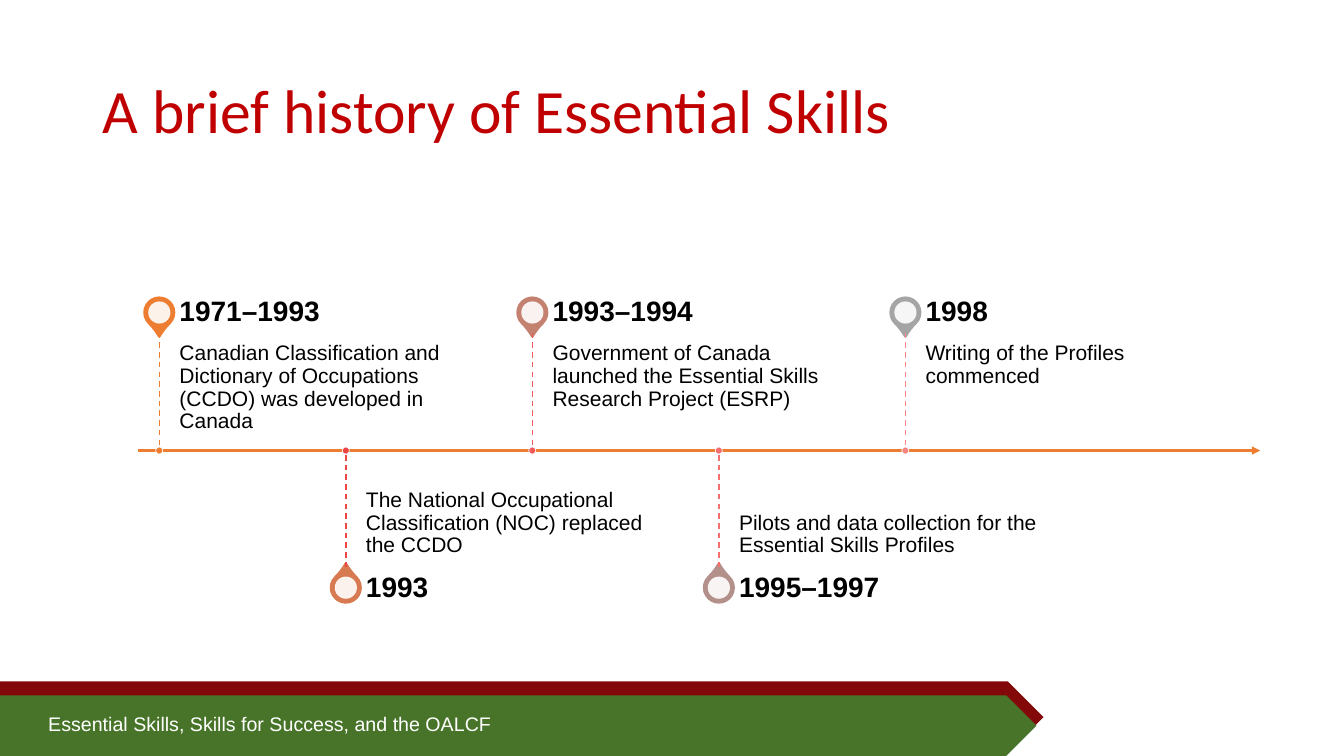
from dataclasses import dataclass

from lxml.etree import SubElement
from pptx import Presentation
from pptx.dml.color import RGBColor
from pptx.enum.dml import MSO_LINE
from pptx.enum.shapes import MSO_CONNECTOR, MSO_SHAPE as SHAPE
from pptx.enum.text import MSO_ANCHOR as ANCHOR, MSO_AUTO_SIZE, PP_ALIGN
from pptx.oxml.ns import qn
from pptx.shapes.autoshape import Shape
from pptx.shapes.connector import Connector
from pptx.slide import Slide
from pptx.util import Inches, Pt

COLORS = {
    "title": "C00000",
    "axis": "ED7D31",
    "text": "000000",
    "white": "FFFFFF",
    "red_band": "82080A",
    "green_band": "487429",
}
AXIS_Y = 4.47
FIRST_X = 1.58
STEP_X = 1.85
PIN_SIZE = 0.29
HOLE_SIZE = 0.22
DOT_SIZE = 0.07
LABEL_GAP = 0.2
LABEL_WIDTH = 3.08
DETAIL_HEIGHT = 1.16
YEAR_HEIGHT = 0.41


@dataclass(frozen=True)
class Milestone:
    years: str
    detail: str
    pin_color: str
    stem_color: str


@dataclass(frozen=True)
class Side:
    pin_y: float
    stem_end: float
    year_top: float
    detail_top: float
    rotation: int
    anchor: ANCHOR
    margins: tuple[float, float, float, float]


MILESTONES = [
    Milestone("1971–1993", "Canadian Classification and Dictionary of Occupations "
              "(CCDO) was developed in Canada", "ED7D31", "ED7D31"),
    Milestone("1993", "The National Occupational Classification (NOC) replaced the CCDO",
              "D87A51", "F04545"),
    Milestone("1993–1994", "Government of Canada launched the Essential Skills "
              "Research Project (ESRP)", "C48170", "F35A5A"),
    Milestone("1995–1997", "Pilots and data collection for the Essential Skills Profiles",
              "B4908B", "F56F6F"),
    Milestone("1998", "Writing of the Profiles commenced", "A5A5A5", "F88484"),
]
ABOVE = Side(3.1, 3.3, 2.89, 3.3, 135, ANCHOR.TOP, (0, 0.1, 0.1, 0.16))
BELOW = Side(5.83, 5.63, 5.63, 4.47, 315, ANCHOR.BOTTOM, (0, 0.16, 0, 0.1))


def rgb(color: str) -> RGBColor:
    return RGBColor.from_string(color)


def add_filled(slide: Slide, kind: SHAPE, left: float, top: float, width: float,
               height: float, fill: str, outline: str = "", weight: float = 0) -> Shape:
    shape = slide.shapes.add_shape(
        kind, Inches(left), Inches(top), Inches(width), Inches(height))
    shape.shadow.inherit = False
    shape.fill.solid()
    shape.fill.fore_color.rgb = rgb(fill)
    if outline:
        shape.line.color.rgb = rgb(outline)
        shape.line.width = Pt(weight)
    else:
        shape.line.fill.background()
    return shape


def add_centered(slide: Slide, kind: SHAPE, x: float, y: float, size: float,
                 fill: str, outline: str = "", weight: float = 0) -> Shape:
    return add_filled(slide, kind, x - size / 2, y - size / 2, size, size,
                      fill, outline, weight)


def add_line(slide: Slide, start: tuple[float, float], end: tuple[float, float],
             color: str, weight: float) -> Connector:
    line = slide.shapes.add_connector(
        MSO_CONNECTOR.STRAIGHT, *(Inches(value) for value in start + end))
    line.line.color.rgb = rgb(color)
    line.line.width = Pt(weight)
    SubElement(line._element.spPr, qn("a:effectLst"))
    return line


def add_label(slide: Slide, text: str, left: float, top: float, width: float,
              height: float, size: float, color: str, anchor: ANCHOR,
              margins: tuple[float, float, float, float], bold: bool = False,
              spacing: float = 0.9) -> None:
    box = slide.shapes.add_textbox(
        Inches(left), Inches(top), Inches(width), Inches(height))
    frame = box.text_frame
    frame.word_wrap = True
    frame.vertical_anchor = anchor
    (frame.margin_left, frame.margin_top, frame.margin_right,
     frame.margin_bottom) = (Inches(margin) for margin in margins)
    frame.text = text
    paragraph = frame.paragraphs[0]
    paragraph.line_spacing = spacing
    font = paragraph.runs[0].font
    font.name, font.size, font.bold = "Arial", Pt(size), bold
    font.color.rgb = rgb(color)


def add_title(slide: Slide) -> None:
    title = slide.shapes.title
    title.left, title.top = Inches(0.92), Inches(0.4)
    title.width, title.height = Inches(11.5), Inches(1.45)
    frame = title.text_frame
    frame.text = "A brief history of Essential Skills"
    frame.auto_size = MSO_AUTO_SIZE.NONE
    frame.vertical_anchor = ANCHOR.MIDDLE
    paragraph = frame.paragraphs[0]
    paragraph.alignment = PP_ALIGN.LEFT
    paragraph.line_spacing = 0.9
    font = paragraph.runs[0].font
    font.name, font.size = "Calibri", Pt(44)
    font.color.rgb = rgb(COLORS["title"])


def add_footer(slide: Slide) -> None:
    add_filled(slide, SHAPE.PENTAGON, 0, 6.76, 10.35, 0.71, COLORS["red_band"])
    add_filled(slide, SHAPE.PENTAGON, 0, 6.9, 10.28, 0.6, COLORS["green_band"])
    add_label(slide, "Essential Skills, Skills for Success, and the OALCF",
              0.38, 7.01, 9.37, 0.34, 14, COLORS["white"], ANCHOR.TOP,
              (0.1, 0.05, 0.1, 0.05), spacing=1.0)


def add_axis(slide: Slide) -> None:
    axis = add_line(slide, (1.37, AXIS_Y), (12.5, AXIS_Y), COLORS["axis"], 1.5)
    SubElement(axis.line._get_or_add_ln(), qn("a:tailEnd"), type="triangle")


def add_milestone(slide: Slide, milestone: Milestone, x: float, side: Side) -> None:
    pin = add_centered(slide, SHAPE.TEAR, x, side.pin_y, PIN_SIZE,
                       milestone.pin_color, milestone.pin_color, 2)
    pin.adjustments[0] = 1.15
    pin.rotation = side.rotation
    hole = add_centered(slide, SHAPE.OVAL, x, side.pin_y, HOLE_SIZE, COLORS["white"])
    hole_color = hole._element.spPr.find(qn("a:solidFill"))[0]
    SubElement(hole_color, qn("a:alpha"), val="90000")

    label_left = x + LABEL_GAP
    add_label(slide, milestone.detail, label_left, side.detail_top, LABEL_WIDTH,
              DETAIL_HEIGHT, 15, COLORS["text"], side.anchor, side.margins)
    add_label(slide, milestone.years, label_left, side.year_top, LABEL_WIDTH,
              YEAR_HEIGHT, 20, COLORS["text"], ANCHOR.MIDDLE, (0, 0, 0.14, 0), bold=True)

    stem = add_line(slide, (x, side.stem_end), (x, AXIS_Y), milestone.stem_color, 1)
    stem.line.dash_style = MSO_LINE.DASH
    add_centered(slide, SHAPE.OVAL, x, AXIS_Y, DOT_SIZE,
                 milestone.stem_color, COLORS["white"], 0.5)


def main() -> None:
    deck = Presentation()
    deck.slide_width, deck.slide_height = Inches(13.33), Inches(7.5)
    slide = deck.slides.add_slide(deck.slide_layouts[5])
    add_footer(slide)
    add_title(slide)
    add_axis(slide)
    for index, milestone in enumerate(MILESTONES):
        side = BELOW if index % 2 else ABOVE
        add_milestone(slide, milestone, FIRST_X + index * STEP_X, side)
    deck.save("out.pptx")


if __name__ == "__main__":
    main()
